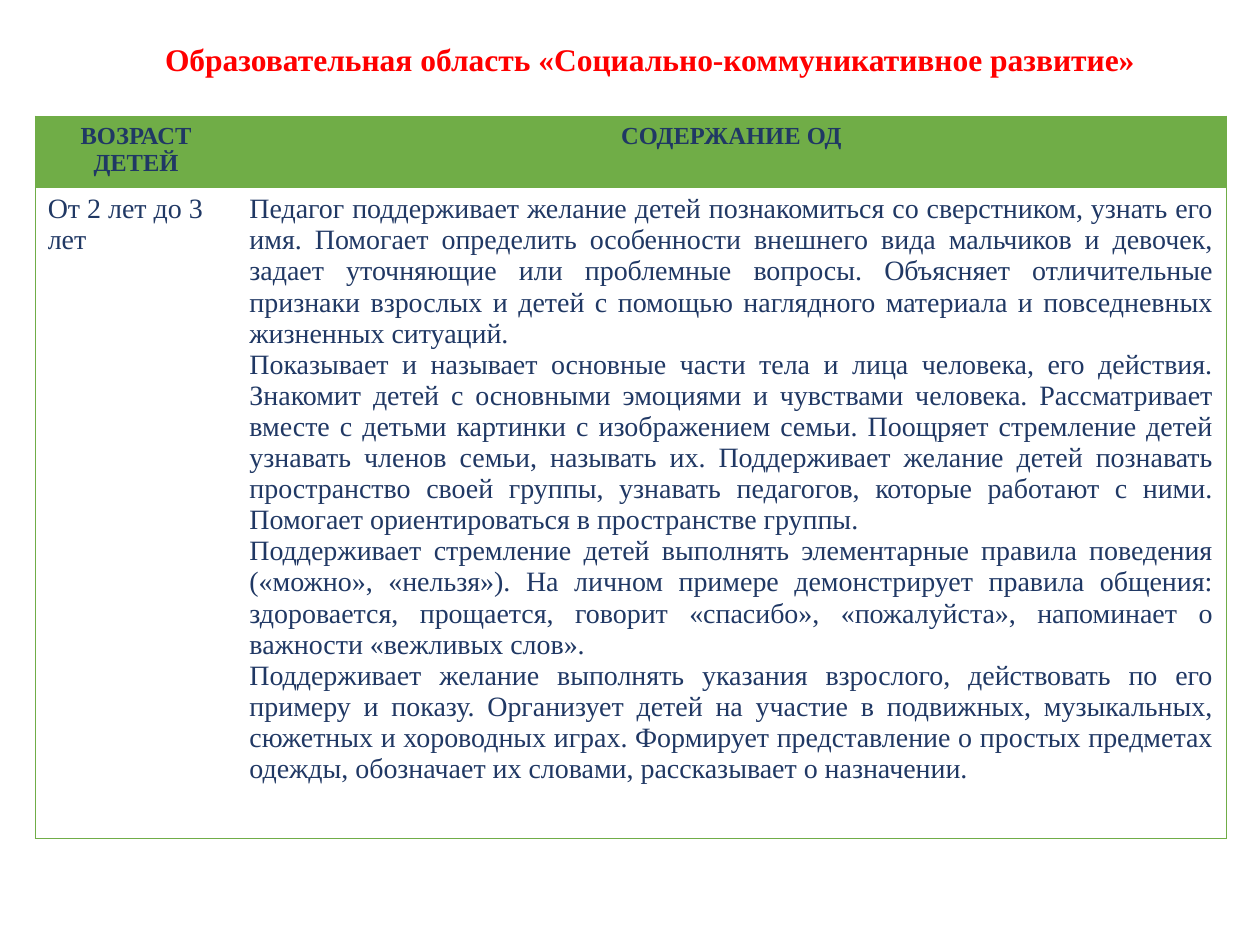
from lxml import etree
from pptx import Presentation, util as u
from pptx.dml.color import RGBColor
from pptx.enum import text
from pptx.oxml import ns

COLORS = {"title": "FF0000", "body": "203864", "green": "70AD47"}
FONT = "Times New Roman"
TITLE = "Образовательная область «Социально-коммуникативное развитие»"
HEADINGS = ["ВОЗРАСТ ДЕТЕЙ", "СОДЕРЖАНИЕ ОД"]
AGE = "От 2 лет до 3 лет"
CONTENT = [
    "Педагог поддерживает желание детей познакомиться со сверстником, узнать его имя. "
    "Помогает определить особенности внешнего вида мальчиков и девочек, задает уточняющие "
    "или проблемные вопросы. Объясняет отличительные признаки взрослых и детей с помощью "
    "наглядного материала и повседневных жизненных ситуаций. ",
    "Показывает и называет основные части тела и лица человека, его действия. Знакомит детей "
    "с основными эмоциями и чувствами человека. Рассматривает вместе с детьми картинки с "
    "изображением семьи. Поощряет стремление детей узнавать членов семьи, называть их. "
    "Поддерживает желание детей познавать пространство своей группы, узнавать педагогов, "
    "которые работают с ними. Помогает ориентироваться в пространстве группы. ",
    "Поддерживает стремление детей выполнять элементарные правила поведения («можно», "
    "«нельзя»). На личном примере демонстрирует правила общения: здоровается, прощается, "
    "говорит «спасибо», «пожалуйста», напоминает о важности «вежливых слов». ",
    "Поддерживает желание выполнять указания взрослого, действовать по его примеру и показу. "
    "Организует детей на участие в подвижных, музыкальных, сюжетных и хороводных играх. "
    "Формирует представление о простых предметах одежды, обозначает их словами, "
    "рассказывает о назначении.",
]


def write(frame, paragraphs, size, color, align, bold=False):
    """Write paragraphs of one style into a text frame."""
    frame.word_wrap = True
    for index, wording in enumerate(paragraphs):
        paragraph = frame.paragraphs[0] if index == 0 else frame.add_paragraph()
        paragraph.alignment = align
        run = paragraph.add_run()
        run.text = wording
        run.font.name = FONT
        run.font.size = u.Pt(size)
        run.font.bold = bold
        run.font.color.rgb = RGBColor.from_string(COLORS[color])


def set_borders(cell, visible):
    """Draw thin green lines on the visible sides of a cell and none on the others."""
    properties = cell._tc.get_or_add_tcPr()
    for side in "LRTB":
        line = etree.SubElement(properties, ns.qn(f"a:ln{side}"), w=str(u.Pt(0.5)))
        if side in visible:
            fill = etree.SubElement(line, ns.qn("a:solidFill"))
            etree.SubElement(fill, ns.qn("a:srgbClr"), val=COLORS["green"])
        else:
            etree.SubElement(line, ns.qn("a:noFill"))


def add_title(slide):
    """Add the centred red title."""
    title = slide.shapes.add_textbox(u.Inches(0.59), u.Inches(0.27), u.Inches(9.14), u.Inches(0.4))
    write(title.text_frame, [TITLE], 18, "title", text.PP_ALIGN.CENTER, True)


def add_age_table(slide):
    """Add the table of ages and educational content."""
    table = slide.shapes.add_table(
        2, 2, u.Inches(0.28), u.Inches(0.92), u.Inches(9.45), u.Inches(5.73)
    ).table
    table.first_row = table.horz_banding = False
    for column, width in zip(table.columns, (1.6, 7.85)):
        column.width = u.Inches(width)
    for row, height in zip(table.rows, (0.56, 5.17)):
        row.height = u.Inches(height)
    for row in table.rows:
        for cell, sides in zip(row.cells, ("LTB", "RTB")):
            set_borders(cell, sides)
    for column, heading in enumerate(HEADINGS):
        header = table.cell(0, column)
        header.fill.solid()
        header.fill.fore_color.rgb = RGBColor.from_string(COLORS["green"])
        write(header.text_frame, [heading], 14, "body", text.PP_ALIGN.CENTER, True)
        table.cell(1, column).fill.background()
    write(table.cell(1, 0).text_frame, [AGE], 16, "body", text.PP_ALIGN.LEFT)
    write(table.cell(1, 1).text_frame, CONTENT, 16, "body", text.PP_ALIGN.JUSTIFY)


def main():
    """Build and save the slide."""
    deck = Presentation()
    deck.slide_width, deck.slide_height = u.Inches(10), u.Inches(7.5)
    slide = deck.slides.add_slide(deck.slide_layouts[6])
    add_title(slide)
    add_age_table(slide)
    deck.save("out.pptx")


if __name__ == "__main__":
    main()
